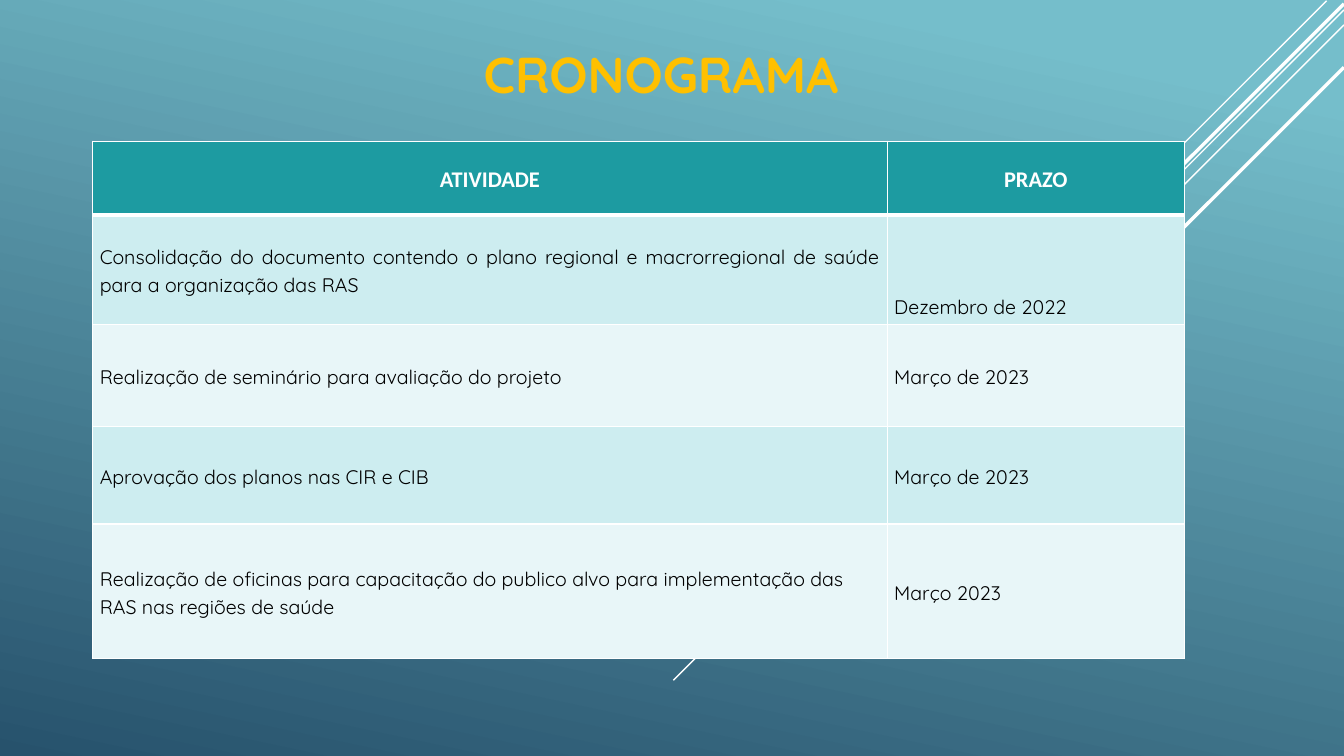
import pptx
import pptx.util
import pptx.dml.color
import pptx.enum.shapes
import pptx.enum.text
import pptx.oxml

COLORS = {
    "sky": "75BECB", "deep": "27526C", "white": "FFFFFF", "black": "000000",
    "gold": "FFC000", "header": "1D9BA1", "band": "CDEDF0", "pale": "E8F6F8",
}
ALIGN = pptx.enum.text.PP_ALIGN
ANCHOR = pptx.enum.text.MSO_ANCHOR
WIDTH, HEIGHT = pptx.util.Inches(13.33), pptx.util.Inches(7.5)

# Start x (% of width), start y (% of height), run (% of width), weight (pt)
RAYS = [
    (98.7, 0.1, 31.2, 1),
    (100, 1.3, 49.9, 1),
    (100, 3.3, 40.7, 1),
    (100, 0.5, 39.8, 2.5),
    (100, 8.9, 35.6, 2.5),
]
COLUMN_SHARES = [59.11, 22.13]
ROW_SHARES = [9.73, 14.53, 13.47, 12.93, 17.73]
SCHEDULE = [
    ("ATIVIDADE", "PRAZO"),
    ("Consolidação do documento contendo o plano regional e macrorregional "
     "de saúde para a organização das RAS", "Dezembro de 2022"),
    ("Realização de seminário para avaliação do projeto", "Março de 2023"),
    ("Aprovação dos planos nas CIR e CIB", "Março de 2023"),
    ("Realização de oficinas para capacitação do publico alvo para "
     "implementação das RAS nas regiões de saúde", "Março 2023"),
]


def across(share):
    """Length for a percentage of the slide's width."""
    return int(WIDTH * share / 100)


def down(share):
    """Length for a percentage of the slide's height."""
    return int(HEIGHT * share / 100)


def rgb(name):
    return pptx.dml.color.RGBColor.from_string(COLORS[name])


def write(tf, text, font="Quicksand", size=14, color="black", bold=False,
          align=ALIGN.LEFT, spacing=1.0, after=6):
    tf.word_wrap = True
    p = tf.paragraphs[0]
    p.alignment, p.line_spacing = align, spacing
    p.space_before, p.space_after = pptx.util.Pt(0), pptx.util.Pt(after)
    r = p.add_run()
    r.text = text
    r.font.name, r.font.size, r.font.bold = font, pptx.util.Pt(size), bold
    r.font.color.rgb = rgb(color)


def paint_background(s):
    fill = s.background.fill
    fill.gradient()
    fill.gradient_angle = 258
    for stop, (name, position) in zip(fill.gradient_stops,
                                      [("sky", 0.1), ("deep", 1)]):
        stop.color.rgb, stop.position = rgb(name), position


def add_ray(s, x, y, run, weight):
    """Draw a 45-degree line running down to the left."""
    length = across(run)
    sp = s.shapes.add_connector(
        pptx.enum.shapes.MSO_CONNECTOR.STRAIGHT, across(x), down(y),
        across(x) - length, down(y) + length)
    sp.line.color.rgb, sp.line.width = rgb("white"), pptx.util.Pt(weight)
    sp._element.spPr.append(pptx.oxml.parse_xml(
        '<a:effectLst xmlns:a="http://schemas.openxmlformats.org/drawingml/2006/main"/>'))


def add_title(s, text):
    sp = s.shapes.title
    sp.left, sp.top = across(3.6), down(5.07)
    sp.width, sp.height = across(91.15), down(90.4)
    tf = sp.text_frame
    tf.auto_size = pptx.enum.text.MSO_AUTO_SIZE.NONE
    tf.vertical_anchor = ANCHOR.TOP
    write(tf, text, size=36, color="gold", bold=True, align=ALIGN.CENTER)


def add_borders(cell, top=1, bottom=1):
    for side, weight in zip("LRTB", (1, 1, top, bottom)):
        cell._tc.get_or_add_tcPr().append(pptx.oxml.parse_xml(
            f'<a:ln{side} xmlns:a="http://schemas.openxmlformats.org/drawingml/2006/main"'
            f' w="{pptx.util.Pt(weight)}"><a:solidFill><a:srgbClr val="{COLORS["white"]}"/>'
            f'</a:solidFill></a:ln{side}>'))


def format_cell(cell, text, row, col):
    add_borders(cell, top=3 if row == 1 else 1, bottom=3 if row == 0 else 1)
    cell.fill.solid()
    cell.margin_left = cell.margin_right = pptx.util.Inches(0.07)
    cell.margin_top = cell.margin_bottom = 0
    cell.vertical_anchor = ANCHOR.MIDDLE
    if row == 0:
        cell.fill.fore_color.rgb = rgb("header")
        write(cell.text_frame, text, font="Calibri", size=16, color="white",
              bold=True, align=ALIGN.CENTER, spacing=1.15)
        return
    cell.fill.fore_color.rgb = rgb("band" if row % 2 else "pale")
    if (row, col) == (1, 1):
        cell.vertical_anchor = ANCHOR.BOTTOM
        cell.margin_bottom = pptx.util.Inches(0.05)
    align = ALIGN.JUSTIFY if (row, col) == (1, 0) else ALIGN.LEFT
    write(cell.text_frame, text, align=align, spacing=1.15)


def add_schedule(s):
    table = s.shapes.add_table(
        len(ROW_SHARES), len(COLUMN_SHARES), across(6.9), down(18.67),
        across(sum(COLUMN_SHARES)), down(sum(ROW_SHARES))).table
    for column, share in zip(table.columns, COLUMN_SHARES):
        column.width = across(share)
    for row, share in zip(table.rows, ROW_SHARES):
        row.height = down(share)
    for row, texts in enumerate(SCHEDULE):
        for col, text in enumerate(texts):
            format_cell(table.cell(row, col), text, row, col)


def main():
    prs = pptx.Presentation()
    prs.slide_width, prs.slide_height = WIDTH, HEIGHT
    s = prs.slides.add_slide(prs.slide_layouts[5])
    paint_background(s)
    for ray in RAYS:
        add_ray(s, *ray)
    add_title(s, "CRONOGRAMA")
    add_schedule(s)
    prs.save("out.pptx")


if __name__ == "__main__":
    main()
